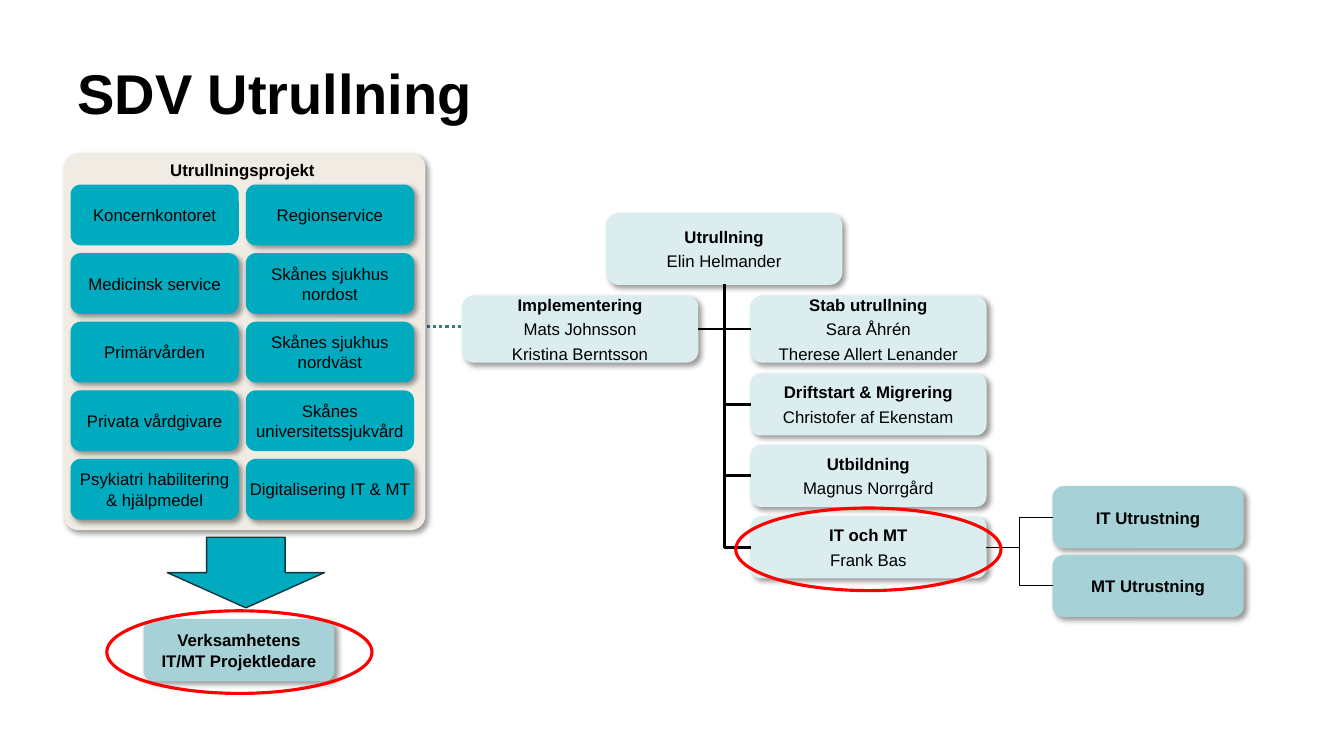
from dataclasses import dataclass

from lxml.etree import SubElement
from pptx import Presentation
from pptx.dml.color import RGBColor
from pptx.enum.dml import MSO_LINE
from pptx.enum.shapes import MSO_CONNECTOR as CONNECTOR, MSO_SHAPE as SHAPE
from pptx.enum.text import MSO_ANCHOR as ANCHOR, MSO_AUTO_SIZE as AUTO_SIZE, PP_ALIGN as ALIGN
from pptx.oxml.ns import qn
from pptx.util import Pt


@dataclass(frozen=True)
class Theme:
    """Colours and type sizes of the slide."""
    font: str = "Arial"
    title_size: float = 40
    body_size: float = 12
    text: str = "000000"
    panel: str = "F0ECE4"
    teal: str = "00ABC0"
    pale: str = "DBEDEF"
    mist: str = "A6D2D7"
    dots: str = "307C8E"
    arrow_edge: str = "15363E"
    mark: str = "FF0000"


THEME = Theme()
TOP, LEFT, BOTTOM, RIGHT = range(4)
PROJECTS = [
    ("Koncernkontoret", "Regionservice"),
    ("Medicinsk service", "Skånes sjukhus nordost"),
    ("Primärvården", "Skånes sjukhus nordväst"),
    ("Privata vårdgivare", "Skånes universitetssjukvård"),
    ("Psykiatri habilitering & hjälpmedel", "Digitalisering IT & MT"),
]
FLAT_PROJECTS = {"Koncernkontoret", "Skånes universitetssjukvård"}
TEAMS = [
    ("Driftstart & Migrering", "Christofer af Ekenstam"),
    ("Utbildning", "Magnus Norrgård"),
    ("IT och MT", "Frank Bas"),
]


def style_paragraph(paragraph, size, bold):
    """Give a paragraph the theme font, a size and a weight."""
    font = paragraph.font
    font.name, font.size, font.bold = THEME.font, Pt(size), bold
    font.color.rgb = RGBColor.from_string(THEME.text)


def style_line(line, color, width):
    """Set the colour and width of a line."""
    line.color.rgb = RGBColor.from_string(color)
    line.width = Pt(width)


def add_shadow(shape):
    """Add a soft shadow to the lower right of a shape."""
    effects = shape._element.spPr.find(qn("a:effectLst"))
    outer = SubElement(effects, qn("a:outerShdw"), blurRad=str(Pt(4)), dist=str(Pt(3)),
                       dir="2700000", algn="tl", rotWithShape="0")
    color = SubElement(outer, qn("a:srgbClr"), val="000000")
    SubElement(color, qn("a:alpha"), val="40000")


def add_block(shapes, kind, box, fill=None, edge=None, edge_width=1, shadow=False):
    """Add a preset shape with an optional fill, outline and shadow."""
    shape = shapes.add_shape(kind, *map(Pt, box))
    shape.shadow.inherit = False
    if fill:
        shape.fill.solid()
        shape.fill.fore_color.rgb = RGBColor.from_string(fill)
    else:
        shape.fill.background()
    if edge:
        style_line(shape.line, edge, edge_width)
    else:
        shape.line.fill.background()
    if shadow:
        add_shadow(shape)
    return shape


def write_centred(shape, lines, space_after=0, bold_first=False):
    """Write centred lines in a shape, the first one bold if asked."""
    frame = shape.text_frame
    frame.word_wrap = True
    frame.vertical_anchor = ANCHOR.MIDDLE
    frame.text = "\n".join(lines)
    for index, paragraph in enumerate(frame.paragraphs):
        paragraph.alignment = ALIGN.CENTER
        paragraph.space_after = Pt(space_after)
        style_paragraph(paragraph, THEME.body_size, bold_first and index == 0)


def add_label(shapes, text, box, size, wrap):
    """Add a bold text box and return its frame."""
    frame = shapes.add_textbox(*map(Pt, box)).text_frame
    frame.word_wrap = wrap
    frame.text = text
    style_paragraph(frame.paragraphs[0], size, True)
    return frame


def add_role(shapes, lines, box, color=THEME.pale):
    """Add a shadowed organisation box with a bold first line."""
    shape = add_block(shapes, SHAPE.ROUNDED_RECTANGLE, box, color, color, shadow=True)
    write_centred(shape, lines, space_after=3, bold_first=True)
    return shape


def add_line(shapes, kind, color, width, ends=(0, 0, 0, 0)):
    """Add a connector without a shadow."""
    connector = shapes.add_connector(kind, *map(Pt, ends))
    style_line(connector.line, color, width)
    SubElement(connector._element.spPr, qn("a:effectLst"))
    return connector


def join(shapes, start, start_site, end, end_site, width, bend):
    """Join two shapes with an elbow connector of the given bend."""
    connector = add_line(shapes, CONNECTOR.ELBOW, THEME.text, width)
    connector.begin_connect(start, start_site)
    connector.end_connect(end, end_site)
    connector._element.spPr.find(qn("a:prstGeom")).set("prst", bend)


def add_project_panel(shapes):
    """Add the grouped panel with its grid of projects."""
    group = shapes.add_group_shape().shapes
    panel = add_block(group, SHAPE.ROUNDED_RECTANGLE, (45.4, 109.4, 258.5, 269.3),
                      THEME.panel, shadow=True)
    panel.adjustments[0] = 0.041
    for row, names in enumerate(PROJECTS):
        for column, name in enumerate(names):
            box = (50.4 + 125.2 * column, 131.8 + 49 * row, 120.2, 43.4)
            project = add_block(group, SHAPE.ROUNDED_RECTANGLE, box, THEME.teal,
                                shadow=name not in FLAT_PROJECTS)
            frame = project.text_frame
            frame.margin_left = frame.margin_top = frame.margin_right = frame.margin_bottom = 0
            write_centred(project, [name])
    heading = add_label(group, "Utrullningsprojekt", (114.5, 110.2, 118.8, 21.6),
                        THEME.body_size, False)
    heading.auto_size = AUTO_SIZE.SHAPE_TO_FIT_TEXT


def add_organisation(shapes):
    """Add the organisation boxes and the lines between them."""
    lead = add_role(shapes, ["Utrullning", "Elin\u00a0Helmander".replace("\u00a0", " ")],
                    (433.4, 152.6, 167.8, 50.4))
    deployment = add_role(shapes, ["Implementering", "Mats Johnsson", "Kristina Berntsson"],
                          (330.5, 211.7, 167.8, 46.8))
    staff = add_role(shapes, ["Stab utrullning", "Sara Åhrén", "Therese Allert Lenander"],
                     (536.4, 211.7, 167.8, 46.8))
    teams = [add_role(shapes, lines, (536.4, 267.1 + 51.1 * row, 167.8, 43.4))
             for row, lines in enumerate(TEAMS)]
    join(shapes, deployment, RIGHT, lead, BOTTOM, 2, "bentConnector2")
    for unit in [staff, *teams]:
        join(shapes, unit, LEFT, lead, BOTTOM, 2, "bentConnector2")
    for row, name in enumerate(["IT Utrustning", "MT Utrustning"]):
        equipment = add_role(shapes, [name], (752.4, 347.8 + 49 * row, 135.4, 43.4), THEME.mist)
        join(shapes, equipment, LEFT, teams[-1], RIGHT, 0.5, "bentConnector3")


def main():
    """Build the slide and save it."""
    presentation = Presentation()
    presentation.slide_width, presentation.slide_height = Pt(960), Pt(540)
    shapes = presentation.slides.add_slide(presentation.slide_layouts[6]).shapes
    title = add_label(shapes, "SDV Utrullning", (48.2, 28.1, 864, 90), THEME.title_size, True)
    title.margin_top = Pt(8.6)
    title.paragraphs[0].line_spacing = 1.1
    dotted = add_line(shapes, CONNECTOR.STRAIGHT, THEME.dots, 2.25, (463.7, 233.3, 276.5, 233.3))
    dotted.line.dash_style = MSO_LINE.ROUND_DOT
    add_project_panel(shapes)
    add_organisation(shapes)
    add_role(shapes, ["Verksamhetens IT/MT Projektledare"], (103, 442.8, 135.4, 43.4), THEME.mist)
    add_block(shapes, SHAPE.DOWN_ARROW, (119.5, 383.8, 112.3, 50.4), THEME.teal, THEME.arrow_edge)
    for left, top in [(525.6, 362.9), (76.3, 436.3)]:
        add_block(shapes, SHAPE.OVAL, (left, top, 189.4, 59), edge=THEME.mark, edge_width=2.25)
    presentation.save("out.pptx")


if __name__ == "__main__":
    main()
